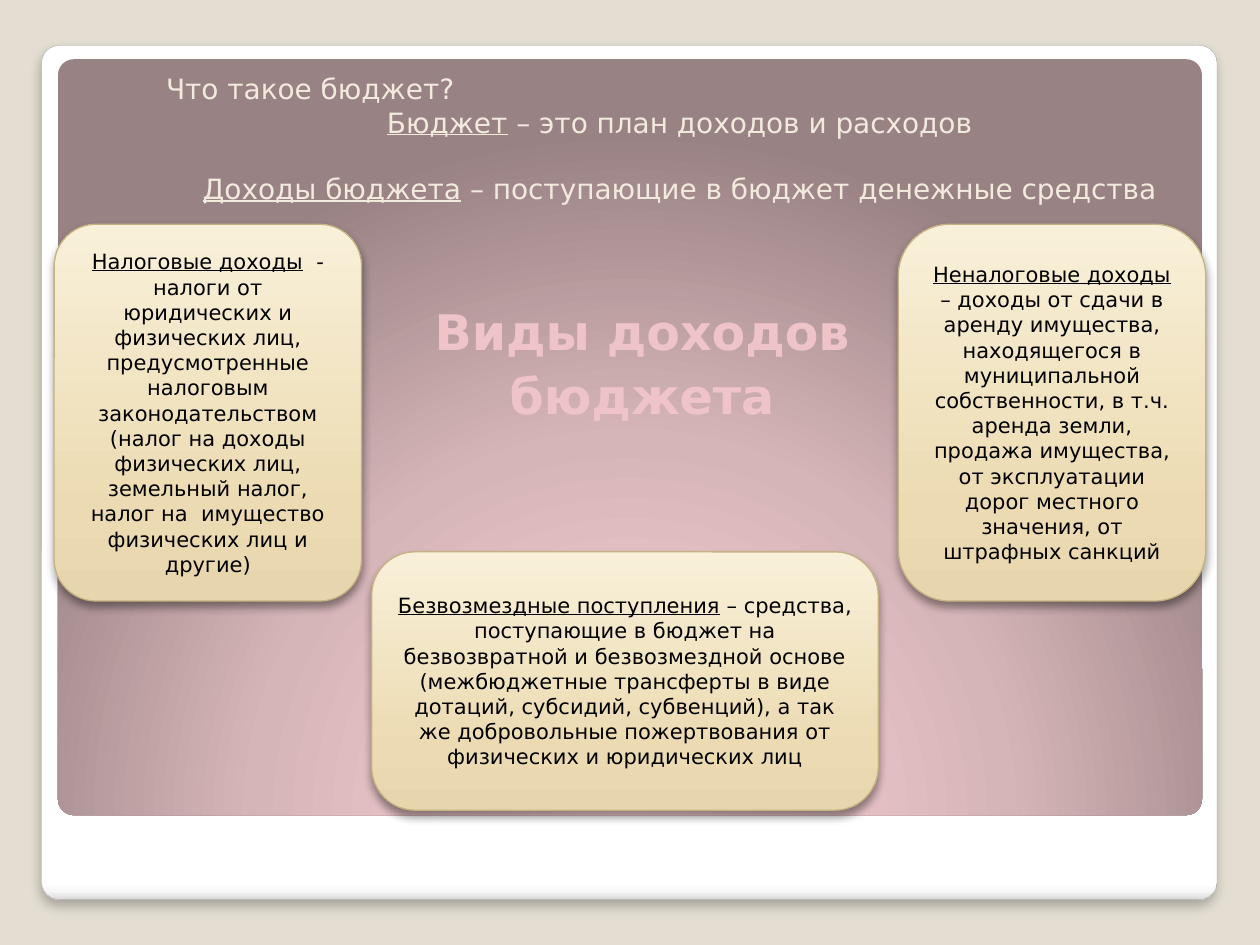
from pptx import Presentation
from pptx.dml.color import RGBColor
from pptx.enum.shapes import MSO_SHAPE
from pptx.enum.text import MSO_ANCHOR, PP_ALIGN
from pptx.oxml import parse_xml
from pptx.oxml.ns import nsdecls, qn
from pptx.util import Inches, Pt

FONT = "DejaVu Sans"
BACKGROUND = RGBColor(0xE3, 0xDE, 0xD1)
CREAM = RGBColor(0xF3, 0xEA, 0xDE)
PINK = RGBColor(0xEF, 0xC4, 0xC9)
BLACK = RGBColor(0, 0, 0)
FRAME_LINE = RGBColor(0xA4, 0xA4, 0xA4)
CARD_LINE = RGBColor(0xC4, 0xB2, 0x82)
WHITE = RGBColor(0xFF, 0xFF, 0xFF)

# Gradient stops: (percent, colour)
FRAME_STOPS = [(0, WHITE), (98, WHITE), (99, RGBColor(0xF7, 0xF7, 0xF7)),
               (100, RGBColor(0xDA, 0xDA, 0xDA))]
PANEL_STOPS = [(0, RGBColor(0xFC, 0xD4, 0xD8)), (55, RGBColor(0xD6, 0xB5, 0xB8)),
               (100, RGBColor(0x99, 0x82, 0x84))]
CARD_STOPS = [(0, RGBColor(0xE7, 0xD6, 0xAD)), (25, RGBColor(0xEC, 0xDB, 0xB2)),
              (100, RGBColor(0xF9, 0xF0, 0xD9))]
RADIAL = ('<a:path path="circle"><a:fillToRect l="50000" t="175000" '
          'r="50000" b="-75000"/></a:path>')

# Content
TITLE = ["Виды доходов", "бюджета"]
# (underlined term, explanation, alignment, space before in points)
INTRO = [
    ("", "Что такое бюджет?", PP_ALIGN.LEFT, 0),
    ("Бюджет", " – это план доходов и расходов", PP_ALIGN.CENTER, 0),
    ("Доходы бюджета", " – поступающие в бюджет денежные средства",
     PP_ALIGN.CENTER, 18.6),
]
NON_TAX = ("Неналоговые доходы",
           " – доходы от сдачи в аренду имущества, находящегося в муниципальной "
           "собственности, в т.ч. аренда земли, продажа имущества, от эксплуатации "
           "дорог местного значения, от штрафных санкций")
TAX = ("Налоговые доходы",
       "  - налоги от юридических и физических лиц, предусмотренные налоговым "
       "законодательством (налог на доходы физических лиц, земельный налог, "
       "налог на  имущество физических лиц и другие)")
GRANTS = ("Безвозмездные поступления",
          " – средства, поступающие в бюджет на безвозвратной и безвозмездной "
          "основе (межбюджетные трансферты в виде дотаций, субсидий, субвенций), "
          "а так же добровольные пожертвования от физических и юридических лиц")

# Layout in inches: side cards share a row and sit at the content edges
LEFT, RIGHT, ROW_TOP = 0.43, 9.57, 1.78
SIDE_W, SIDE_H = 2.44, 2.99
CARDS = [
    (NON_TAX, (RIGHT - SIDE_W, ROW_TOP, SIDE_W, SIDE_H), 0.167),
    (TAX, (LEFT, ROW_TOP, SIDE_W, SIDE_H), 0.136),
    (GRANTS, (2.95, 4.38, 4.02, 2.05), 0.167),
]


def gradient(sp, stops, direction):
    gs = "".join(f'<a:gs pos="{pos * 1000}"><a:srgbClr val="{color}"/></a:gs>'
                 for pos, color in stops)
    fill = parse_xml(f'<a:gradFill {nsdecls("a")} rotWithShape="1">'
                     f'<a:gsLst>{gs}</a:gsLst>{direction}</a:gradFill>')
    sp._element.spPr.find(qn("a:prstGeom")).addnext(fill)


def linear(angle):
    return f'<a:lin ang="{angle * 60000}" scaled="0"/>'


def drop_shadow(sp, alpha, blur, distance):
    sp._element.spPr.find(qn("a:effectLst")).append(parse_xml(
        f'<a:outerShdw {nsdecls("a")} blurRad="{Pt(blur)}" dist="{Pt(distance)}" '
        f'dir="5400000" algn="ctr" rotWithShape="0"><a:srgbClr val="000000">'
        f'<a:alpha val="{alpha * 1000}"/></a:srgbClr></a:outerShdw>'))


def rounded(slide, box, adj, stops, direction, line=None, width=0):
    sp = slide.shapes.add_shape(MSO_SHAPE.ROUNDED_RECTANGLE, *map(Inches, box))
    sp.adjustments[0] = adj
    sp.shadow.inherit = False
    if line is None:
        sp.line.fill.background()
    else:
        sp.line.color.rgb = line
        sp.line.width = Pt(width)
    gradient(sp, stops, direction)
    return sp


def add_run(p, text, size, color, underline=False, bold=False):
    r = p.add_run()
    r.text = text
    r.font.name, r.font.size, r.font.color.rgb = FONT, Pt(size), color
    r.font.underline, r.font.bold = underline, bold


def add_definition(p, term, text, size, color):
    if term:
        add_run(p, term, size, color, underline=True)
    add_run(p, text, size, color)


def paragraphs(tf, count):
    return [tf.paragraphs[0]] + [tf.add_paragraph() for _ in range(count - 1)]


def main():
    prs = Presentation()
    prs.slide_width, prs.slide_height = Inches(10), Inches(7.5)
    slide = prs.slides.add_slide(prs.slide_layouts[5])
    slide.background.fill.solid()
    slide.background.fill.fore_color.rgb = BACKGROUND

    # Frame and panel
    frame = rounded(slide, (0.33, 0.36, 9.33, 6.78), 0.021, FRAME_STOPS,
                    linear(90), FRAME_LINE, 0.16)
    drop_shadow(frame, 25, 6, 4)
    rounded(slide, (0.46, 0.47, 9.08, 6), 0.021, PANEL_STOPS, RADIAL)

    # Title, raised above the panel
    title = slide.shapes.title
    slide.shapes._spTree.append(title._element)
    title.left, title.top, title.width, title.height = map(
        Inches, (0.28, ROW_TOP, 9.53, 2.2))
    tf = title.text_frame
    tf.margin_left, tf.margin_right = Inches(0.2), Inches(0.1)
    tf.vertical_anchor = MSO_ANCHOR.MIDDLE
    for p, text in zip(paragraphs(tf, len(TITLE)), TITLE):
        p.alignment, p.space_before = PP_ALIGN.CENTER, Pt(2.5)
        add_run(p, text, 28, PINK, bold=True)

    # Introductory definitions
    tf = slide.shapes.add_textbox(*map(Inches, (1.22, 0.52, 8.35, 1.18))).text_frame
    tf.word_wrap = True
    for p, (term, text, align, before) in zip(paragraphs(tf, len(INTRO)), INTRO):
        p.alignment, p.space_before = align, Pt(before)
        add_definition(p, term, text, 16, CREAM)

    # Income cards
    for (term, text), box, adj in CARDS:
        card = rounded(slide, box, adj, CARD_STOPS, linear(270), CARD_LINE, 0.75)
        drop_shadow(card, 40, 5.2, 3)
        tf = card.text_frame
        tf.word_wrap, tf.vertical_anchor = True, MSO_ANCHOR.MIDDLE
        p = tf.paragraphs[0]
        p.alignment = PP_ALIGN.CENTER
        add_definition(p, term, text, 12, BLACK)

    prs.save("out.pptx")


if __name__ == "__main__":
    main()
